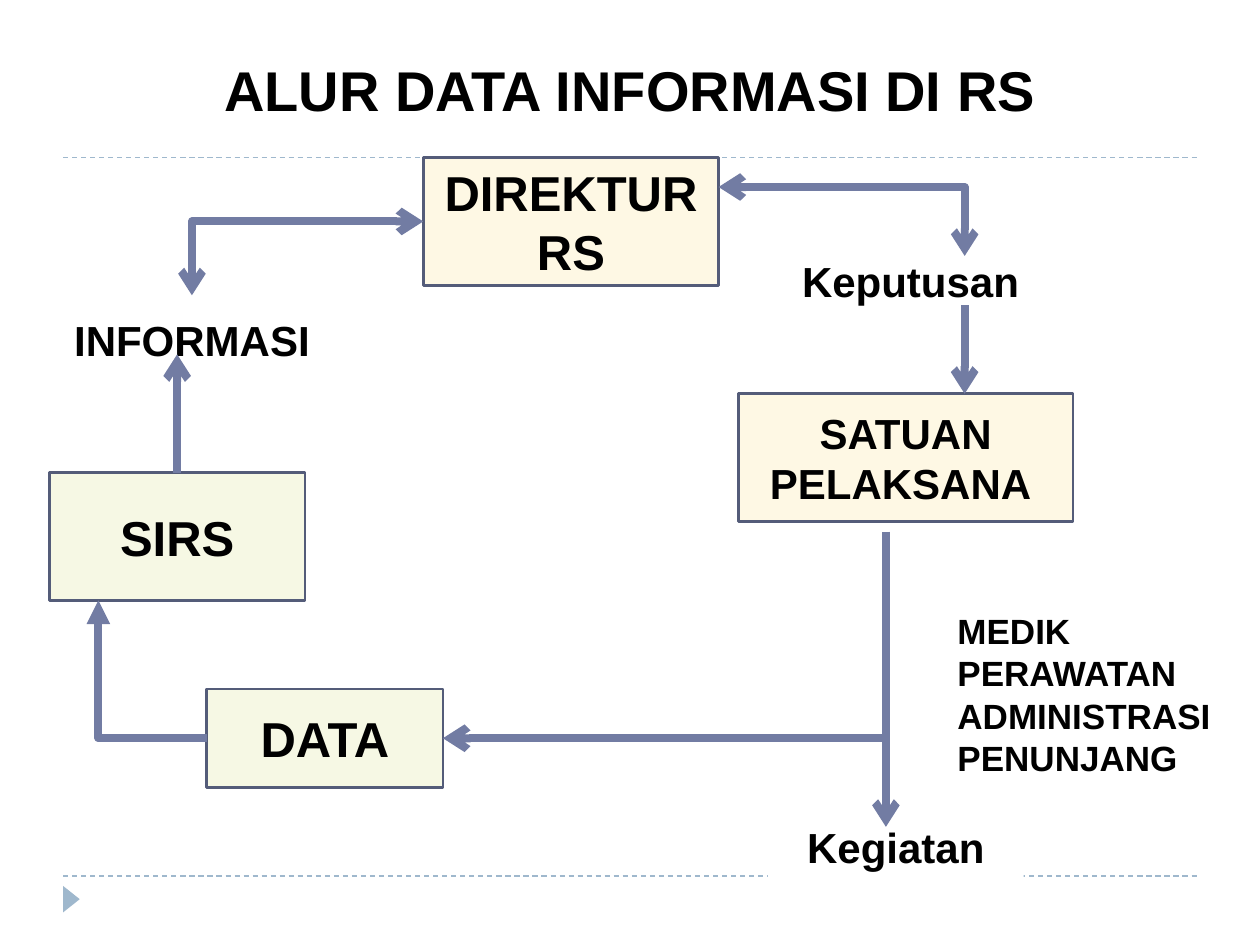
"""Build the hospital data and information flow slide on a 128 by 96 grid."""
from lxml import etree
from pptx import Presentation
from pptx import util as u
from pptx.dml.color import RGBColor
from pptx.enum import dml, shapes, text
from pptx.oxml.ns import qn

hues = {"ink": "000000", "cream": "FEF8E4", "lime": "F6F8E4", "white": "FFFFFF",
        "edge": "545C79", "flow": "727CA3", "rule": "9FB8CD"}
deck = Presentation()
deck.slide_width, deck.slide_height = u.Inches(10), u.Inches(7.5)
cell = deck.slide_width / 128
slide = deck.slides.add_slide(deck.slide_layouts[5])
kind, mid, just = shapes.MSO_SHAPE, text.PP_ALIGN.CENTER, text.PP_ALIGN.JUSTIFY


def write(shape, words, size, align, anchor):
    frame = shape.text_frame
    frame.text = words
    para = frame.paragraphs[0]
    looks = {"name": "Arial", "size": u.Pt(size), "bold": True}
    for key, val in looks.items():
        setattr(para.runs[0].font, key, val)
    para.runs[0].font.color.rgb = RGBColor.from_string(hues["ink"])
    para.alignment = align
    frame.word_wrap, frame.vertical_anchor = True, anchor
    frame.auto_size = text.MSO_AUTO_SIZE.NONE


def link(ends, hue, width, bent=False):
    form = shapes.MSO_CONNECTOR.ELBOW if bent else shapes.MSO_CONNECTOR.STRAIGHT
    line = slide.shapes.add_connector(form, *[round(n * cell) for n in ends])
    line.line.color.rgb = RGBColor.from_string(hues[hue])
    line.line.width = u.Pt(width)
    props = line._element.spPr
    if bent:
        props.find(qn("a:prstGeom")).set("prst", "bentConnector2")
    etree.SubElement(props, qn("a:effectLst"))
    return line


title = slide.shapes.title
spot = {"left": 6.4, "top": 2.2, "width": 115.2, "height": 10.9}
for key, val in spot.items():
    setattr(title, key, round(val * cell))
write(title, "ALUR DATA INFORMASI DI RS", 32, mid, text.MSO_ANCHOR.BOTTOM)

for row in (89, 16):
    link((6.4, row, 121.6, row), "rule", 0.75).line.dash_style = dml.MSO_LINE.DASH

mark = slide.shapes.add_shape(
    kind.ISOSCELES_TRIANGLE, *[round(n * cell) for n in (5.9, 90.5, 2.7, 1.7)])
mark.rotation = 90
mark.shadow.inherit = False
mark.fill.solid()
mark.fill.fore_color.rgb = RGBColor.from_string(hues["rule"])
mark.line.fill.background()

boxes = [
    ("DIREKTUR RS", (43, 16, 30, 13), "cream", 28, mid),
    ("SIRS", (5, 48, 26, 13), "lime", 28, mid),
    ("SATUAN PELAKSANA ", (75, 40, 34, 13), "cream", 24, mid),
    ("DATA", (21, 70, 24, 10), "lime", 28, mid),
    ("Kegiatan", (78, 82, 26, 8), "white", 24, mid),
    ("Keputusan", (78, 24, 29, 9), "white", 24, mid),
    ("MEDIK PERAWATAN ADMINISTRASI PENUNJANG", (96, 60, 29, 21), "white", 20, just),
    ("INFORMASI", (4, 30, 31, 9), "white", 24, mid),
]
for words, place, hue, size, align in boxes:
    box = slide.shapes.add_shape(kind.RECTANGLE, *[round(n * cell) for n in place])
    box.shadow.inherit = False
    box.fill.solid()
    box.fill.fore_color.rgb = RGBColor.from_string(hues[hue])
    if hue == "white":
        box.line.fill.background()
    else:
        box.line.color.rgb = RGBColor.from_string(hues["edge"])
        box.line.width = u.Pt(1.5)
    write(box, words, size, align, text.MSO_ANCHOR.MIDDLE)

flows = [
    ((21, 75, 10, 61), True, {"tailEnd": "triangle"}),
    ((18, 48, 18, 36), False, {"tailEnd": "arrow"}),
    ((43, 22.5, 19.5, 30), True, {"headEnd": "arrow", "tailEnd": "arrow"}),
    ((73, 19, 98, 26), True, {"headEnd": "arrow", "tailEnd": "arrow"}),
    ((98, 31, 98, 40), False, {"tailEnd": "arrow"}),
    ((90, 54, 90, 84), False, {"tailEnd": "arrow"}),
    ((90, 75, 45, 75), False, {"tailEnd": "arrow"}),
]
for ends, bent, tips in flows:
    flow = link(ends, "flow", 4.5, bent)
    stroke = flow.line._get_or_add_ln()
    for tag, tip in tips.items():
        etree.SubElement(stroke, qn("a:" + tag), type=tip)

deck.save("out.pptx")
